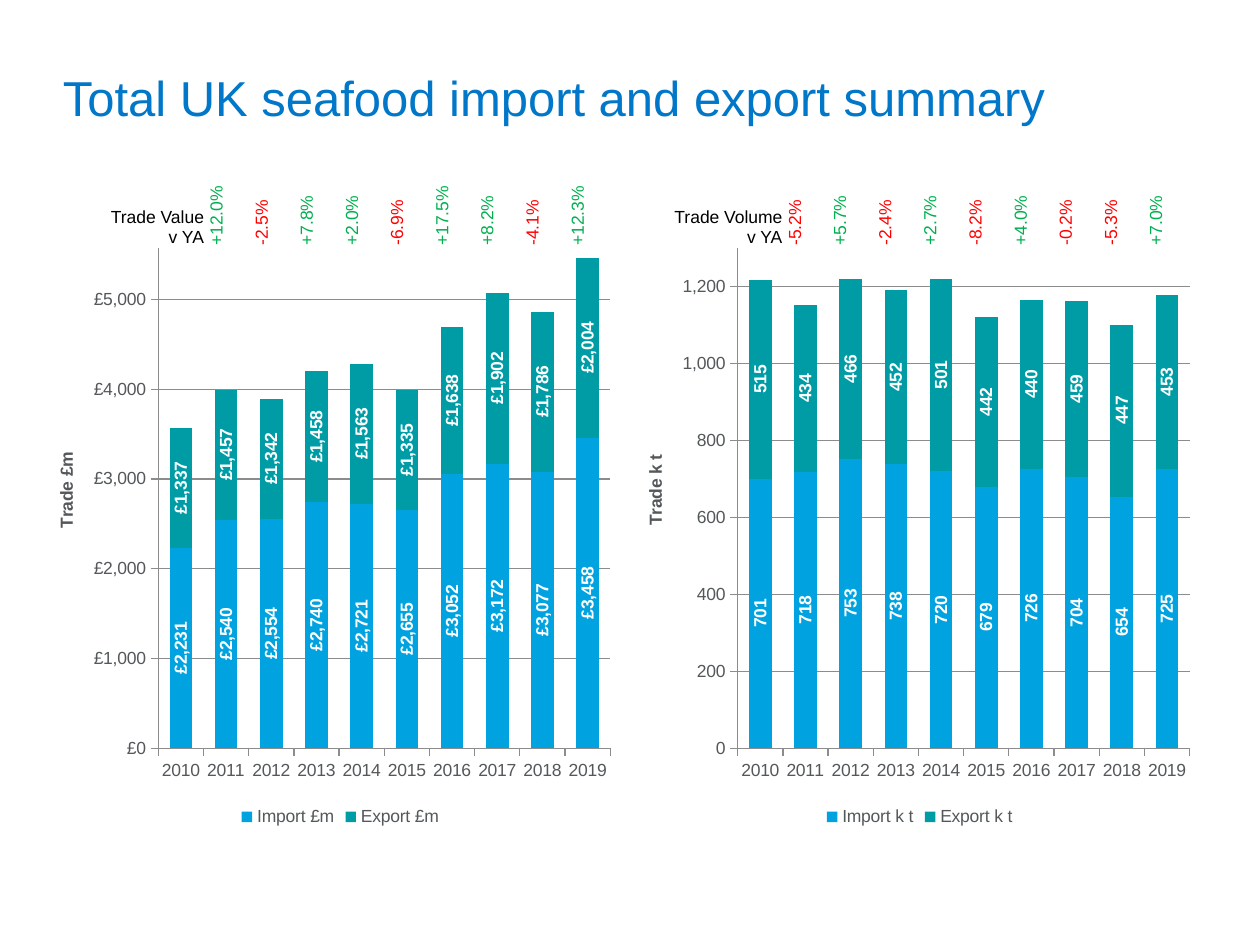
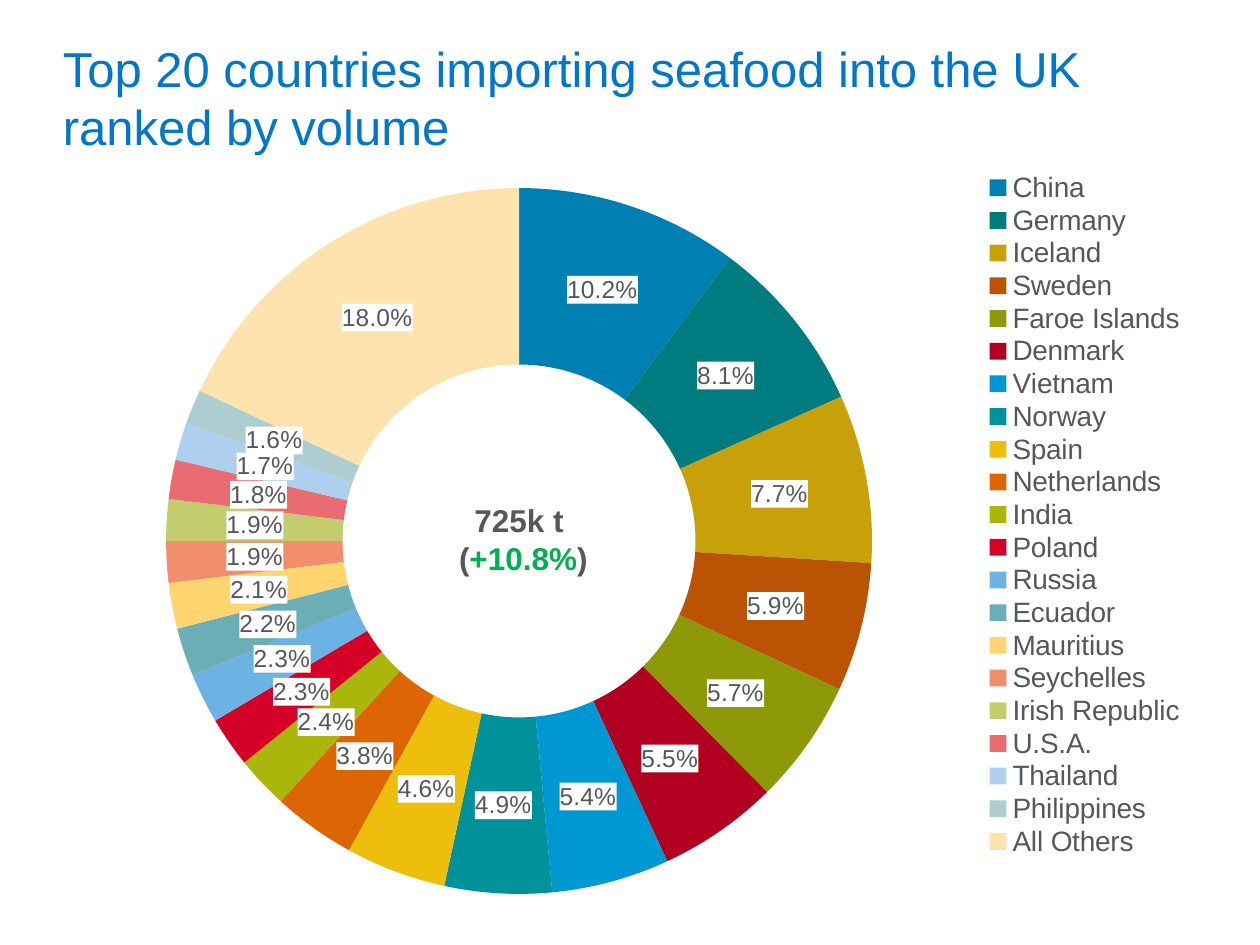
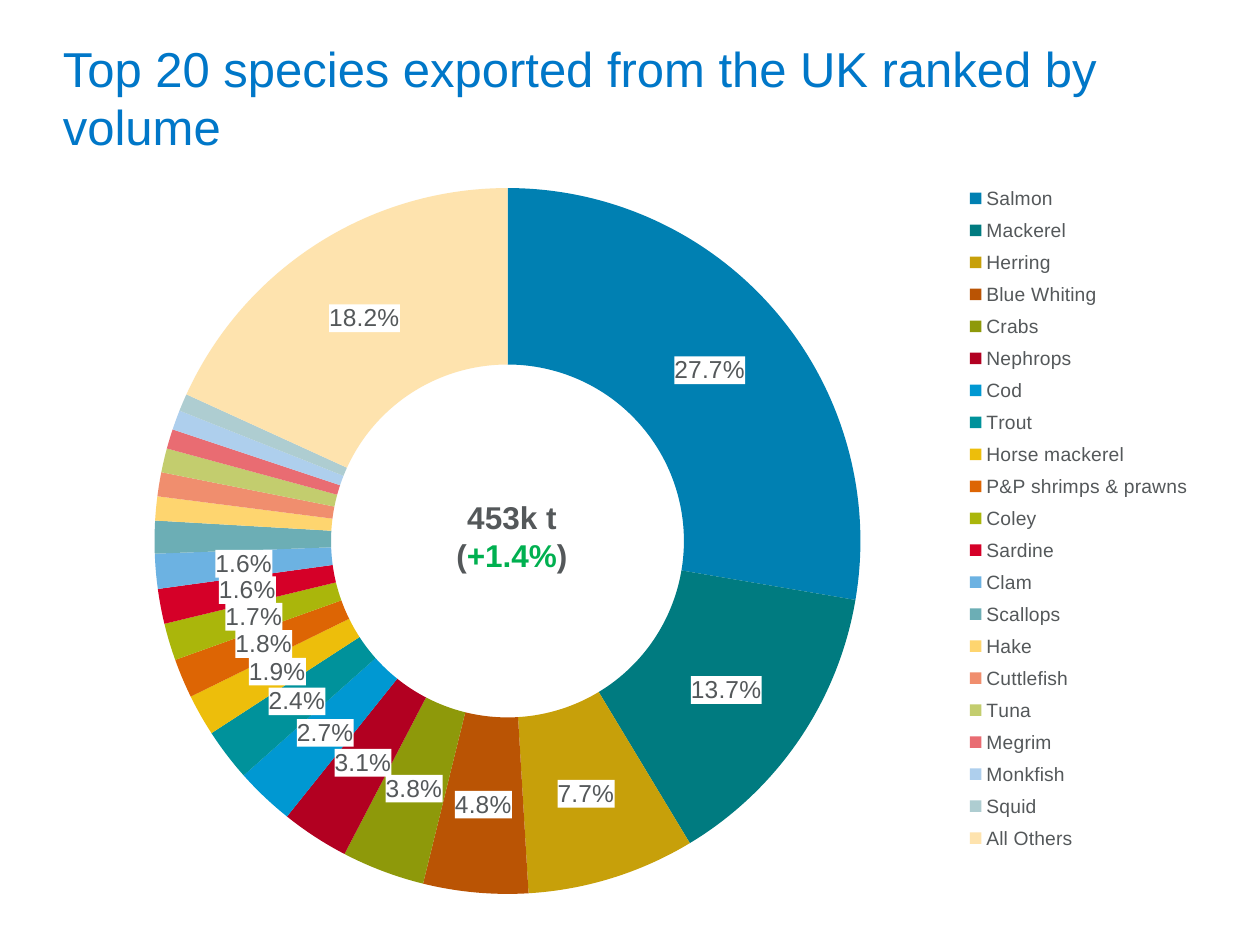
from lxml.etree import SubElement
from pptx import Presentation
from pptx.chart.data import CategoryChartData
from pptx.dml.color import RGBColor
from pptx.enum.chart import XL_CHART_TYPE, XL_LEGEND_POSITION, XL_TICK_MARK
from pptx.enum.text import MSO_ANCHOR, PP_ALIGN
from pptx.oxml import parse_xml
from pptx.oxml.ns import nsdecls, qn
from pptx.util import Cm, Pt

# Shared style
FONT = "Arial"
BLUE, GREY, LINE_GREY = "0077C8", "54585A", "8C8C8C"
GREEN, RED, WHITE, BLACK = "00B050", "FF0000", "FFFFFF", "000000"
BAR_COLORS = ["00A3E0", "009CA6"]
SLICE_COLORS = [
    "0080B2", "007B80", "C7A00A", "BA5404", "8E990A", "B20021", "0098D2",
    "00929B", "EDBE0B", "DD6504", "AAB60B", "D50028", "6CB2E2", "6CAEB5",
    "FED56F", "F08E6E", "C3CD6E", "E96C72", "AECFED", "AECDD1", "FEE3AE",
]
color = RGBColor.from_string


def write_text(text_frame, text, size=10, fill=BLACK, bold=False, align=PP_ALIGN.LEFT):
    """Write lines of text; a line is a string or a list of (text, colour) runs."""
    text_frame.word_wrap = True
    lines = text if isinstance(text, list) else [text]
    for index, line in enumerate(lines):
        paragraph = text_frame.add_paragraph() if index else text_frame.paragraphs[0]
        paragraph.alignment = align
        for words, run_fill in [(line, fill)] if isinstance(line, str) else line:
            run = paragraph.add_run()
            run.text = words
            run.font.name, run.font.size, run.font.bold = FONT, Pt(size), bold
            run.font.color.rgb = color(run_fill)


def place_part(part, position, x, y, width, height, inner=False):
    """Give a chart part a fixed place, in fractions of the chart."""
    for old_layout in part.findall(qn("c:layout")):
        part.remove(old_layout)
    layout = parse_xml(f"<c:layout {nsdecls('c')}><c:manualLayout/></c:layout>")
    settings = [("xMode", "edge"), ("yMode", "edge"),
                ("x", x), ("y", y), ("w", width), ("h", height)]
    if inner:
        settings.insert(0, ("layoutTarget", "inner"))
    for name, value in settings:
        SubElement(layout[0], qn(f"c:{name}")).set("val", str(value))
    part.insert(position, layout)


presentation = Presentation()
presentation.slide_width, presentation.slide_height = Cm(25.4), Cm(19.05)

# Slides with their titles
slides = []
for title in [
    "Total UK seafood import and export summary",
    "Top 20 countries importing seafood into the UK ranked by volume",
    "Top 20 species exported from the UK ranked by volume",
]:
    slide = presentation.slides.add_slide(presentation.slide_layouts[6])
    title_box = slide.shapes.add_textbox(Cm(1.02), Cm(0.76), Cm(23.29), Cm(2.39))
    title_box.text_frame.vertical_anchor = MSO_ANCHOR.MIDDLE
    write_text(title_box.text_frame, title, size=28, fill=BLUE)
    slides.append(slide)

# Slide 1: trade value and trade volume
trades = [
    dict(left=1.02, table_left=1.24, unit="£m", heading="Trade Value",
         number_format='"£"#,##0', maximum=6000, step=1000,
         imports=[2231, 2540, 2554, 2740, 2721, 2655, 3052, 3172, 3077, 3458],
         exports=[1337, 1457, 1342, 1458, 1563, 1335, 1638, 1902, 1786, 2004],
         changes=[12.0, -2.5, 7.8, 2.0, -6.9, 17.5, 8.2, -4.1, 12.3]),
    dict(left=12.7, table_left=12.9, unit="k t", heading="Trade Volume",
         number_format="#,##0", maximum=1400, step=200,
         imports=[701, 718, 753, 738, 720, 679, 726, 704, 654, 725],
         exports=[515, 434, 466, 452, 501, 442, 440, 459, 447, 453],
         changes=[-5.2, 5.7, -2.4, 2.7, -8.2, 4.0, -0.2, -5.3, 7.0]),
]
for trade in trades:
    # Stacked columns
    data = CategoryChartData()
    data.categories = [str(year) for year in range(2010, 2020)]
    data.add_series(f"Import {trade['unit']}", trade["imports"])
    data.add_series(f"Export {trade['unit']}", trade["exports"])
    chart = slides[0].shapes.add_chart(
        XL_CHART_TYPE.COLUMN_STACKED, Cm(trade["left"]), Cm(3.84), Cm(11.68), Cm(12.93), data
    ).chart
    chart.has_title = False
    chart.font.name, chart.font.size = FONT, Pt(10)
    chart.font.color.rgb = color(GREY)
    chart.has_legend = True
    chart.legend.position = XL_LEGEND_POSITION.BOTTOM
    chart.legend.include_in_layout = False
    place_part(chart.element.find(f".//{qn('c:plotArea')}"), 0, 0.186, 0.03, 0.78, 0.84, inner=True)

    plot = chart.plots[0]
    plot.gap_width, plot.overlap = 100, 100
    plot.vary_by_categories = False
    for series, bar_color in zip(plot.series, BAR_COLORS):
        series.format.fill.solid()
        series.format.fill.fore_color.rgb = color(bar_color)
        labels = series.data_labels
        labels.show_value = True
        labels.number_format, labels.number_format_is_linked = trade["number_format"], False
        labels.font.name, labels.font.size, labels.font.bold = FONT, Pt(10), True
        labels.font.color.rgb = color(WHITE)
    for series_labels in chart.element.iterfind(f".//{qn('c:ser')}/{qn('c:dLbls')}"):
        body = series_labels.find(f".//{qn('a:bodyPr')}")
        body.set("rot", "-5400000")
        body.set("vert", "horz")

    # Axes
    value_axis = chart.value_axis
    value_axis.minimum_scale, value_axis.maximum_scale = 0, trade["maximum"]
    value_axis.major_unit = trade["step"]
    value_axis.tick_labels.number_format = trade["number_format"]
    value_axis.tick_labels.number_format_is_linked = False
    value_axis.has_major_gridlines = True
    value_axis.major_gridlines.format.line.color.rgb = color(LINE_GREY)
    write_text(value_axis.axis_title.text_frame, f"Trade {trade['unit']}", fill=GREY, bold=True)
    for axis in (chart.category_axis, value_axis):
        axis.major_tick_mark = XL_TICK_MARK.OUTSIDE
        axis.format.line.color.rgb = color(LINE_GREY)

    # Change on the year before, above the columns
    table = slides[0].shapes.add_table(
        1, 10, Cm(trade["table_left"]), Cm(3.48), Cm(11.09), Cm(1.5)
    ).table
    table.first_row = table.horz_banding = False
    for index, cell in enumerate(table.rows[0].cells):
        table.columns[index].width = Cm(0.91 if index else 2.9)
        cell.margin_left = cell.margin_right = cell.margin_top = Cm(0.03)
        cell.margin_bottom = 0
        cell.fill.solid()
        cell.fill.fore_color.rgb = color(WHITE)
        properties = cell._tc.get_or_add_tcPr()
        for position, side in enumerate(["lnL", "lnR", "lnT", "lnB"]):
            properties.insert(position, parse_xml(
                f'<a:{side} {nsdecls("a")} w="12700"><a:solidFill>'
                f'<a:srgbClr val="{WHITE}"/></a:solidFill></a:{side}>'))
        if index == 0:
            cell.vertical_anchor = MSO_ANCHOR.BOTTOM
            write_text(cell.text_frame, [trade["heading"], "v YA"], align=PP_ALIGN.RIGHT)
        else:
            change = trade["changes"][index - 1]
            cell.vertical_anchor = MSO_ANCHOR.MIDDLE
            properties.set("vert", "vert270")
            write_text(cell.text_frame, f"{change:+.1f}%", fill=GREEN if change > 0 else RED)

# Slides 2 and 3: shares of volume
rankings = [
    dict(slide=slides[1], plot_left=0.1, legend=(0.8, 0.0, 0.19, 0.93), legend_size=16,
         hidden_labels=[], total_at=(8.66, 9.98),
         total=[[("725k t ", GREY)], [("(", GREY), ("+10.8%", GREEN), (")", GREY)]],
         shares={"China": 0.102, "Germany": 0.081, "Iceland": 0.077, "Sweden": 0.059,
                 "Faroe Islands": 0.057, "Denmark": 0.055, "Vietnam": 0.054,
                 "Norway": 0.049, "Spain": 0.046, "Netherlands": 0.038, "India": 0.024,
                 "Poland": 0.023, "Russia": 0.023, "Ecuador": 0.022, "Mauritius": 0.021,
                 "Seychelles": 0.019, "Irish Republic": 0.019, "U.S.A.": 0.018,
                 "Thailand": 0.017, "Philippines": 0.016, "All Others": 0.18}),
    dict(slide=slides[2], plot_left=0.09, legend=(0.79, 0.01, 0.2, 0.92), legend_size=11,
         hidden_labels=range(13, 20), total_at=(8.43, 9.91),
         total=[[("453k t (", GREY), ("+1.4%", GREEN), (")", GREY)]],
         shares={"Salmon": 0.277, "Mackerel": 0.137, "Herring": 0.077,
                 "Blue Whiting": 0.048, "Crabs": 0.038, "Nephrops": 0.031, "Cod": 0.027,
                 "Trout": 0.024, "Horse mackerel": 0.019, "P&P shrimps & prawns": 0.018,
                 "Coley": 0.017, "Sardine": 0.016, "Clam": 0.016, "Scallops": 0.015,
                 "Hake": 0.011, "Cuttlefish": 0.011, "Tuna": 0.011, "Megrim": 0.009,
                 "Monkfish": 0.009, "Squid": 0.008, "All Others": 0.182}),
]
for ranking in rankings:
    # Doughnut
    data = CategoryChartData()
    data.categories = ranking["shares"].keys()
    data.add_series("Series 1", ranking["shares"].values())
    chart = ranking["slide"].shapes.add_chart(
        XL_CHART_TYPE.DOUGHNUT, Cm(1.02), Cm(3.43), Cm(23.29), Cm(14.94), data
    ).chart
    chart.has_title = False
    chart.font.name, chart.font.size = FONT, Pt(18)
    chart.font.color.rgb = color(GREY)
    place_part(chart.element.find(f".//{qn('c:plotArea')}"), 0,
               ranking["plot_left"], 0.024, 0.611, 0.953, inner=True)
    series = chart.plots[0].series[0]
    for index, slice_color in enumerate(SLICE_COLORS):
        slice_fill = series.points[index].format.fill
        slice_fill.solid()
        slice_fill.fore_color.rgb = color(slice_color)

    # Share labels on white
    labels = series.data_labels
    labels.show_value = True
    labels.number_format, labels.number_format_is_linked = "0.0%", False
    labels.font.name, labels.font.size = FONT, Pt(14)
    labels.font.color.rgb = color(GREY)
    series_labels = chart.element.find(f".//{qn('c:ser')}/{qn('c:dLbls')}")
    series_labels.find(qn("c:txPr")).addprevious(parse_xml(
        f'<c:spPr {nsdecls("c", "a")}><a:solidFill><a:srgbClr val="{WHITE}"/>'
        "</a:solidFill></c:spPr>"))
    for position, index in enumerate(ranking["hidden_labels"]):
        series_labels.insert(position, parse_xml(
            f'<c:dLbl {nsdecls("c")}><c:idx val="{index}"/><c:delete val="1"/></c:dLbl>'))

    # Legend
    chart.has_legend = True
    chart.legend.position = XL_LEGEND_POSITION.RIGHT
    chart.legend.include_in_layout = False
    chart.legend.font.name, chart.legend.font.size = FONT, Pt(ranking["legend_size"])
    chart.legend.font.color.rgb = color(GREY)
    place_part(chart.element.find(f".//{qn('c:legend')}"), 1, *ranking["legend"])

    # Total in the hole
    left, top = ranking["total_at"]
    total_box = ranking["slide"].shapes.add_textbox(Cm(left), Cm(top), Cm(3.78), Cm(1.8))
    write_text(total_box.text_frame, ranking["total"], size=18, bold=True, align=PP_ALIGN.CENTER)

presentation.save("out.pptx")
